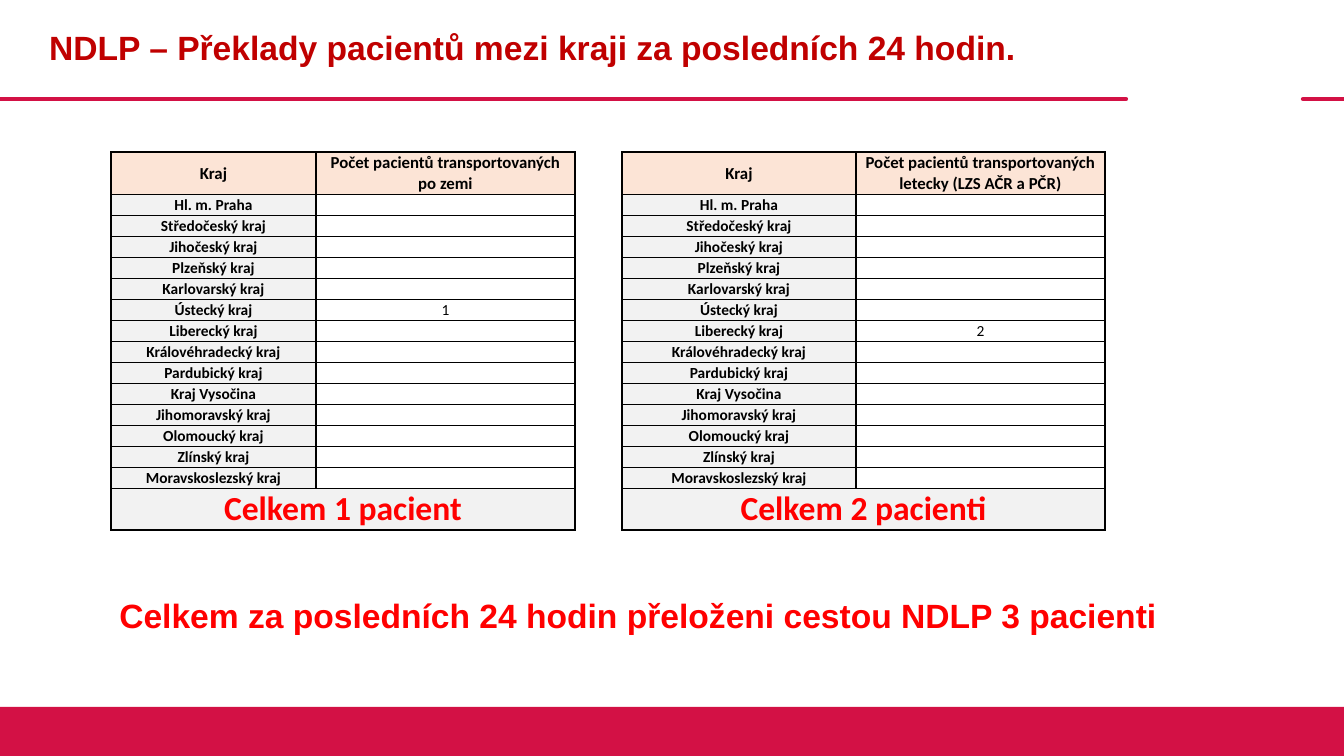
from lxml.etree import SubElement
from pptx import Presentation
from pptx.dml.color import RGBColor
from pptx.enum.shapes import MSO_CONNECTOR, MSO_SHAPE
from pptx.enum.text import MSO_ANCHOR, PP_ALIGN
from pptx.oxml.ns import qn
from pptx.util import Pt

PX = 12192000 / 1344
RED, BLACK, ALERT = "D31145", "000000", "FF0000"
PEACH, GREY, WHITE = "FCE4D6", "F2F2F2", "FFFFFF"

TITLE = "NDLP – Překlady pacientů mezi kraji za posledních 24 hodin."
SUMMARY = "Celkem za posledních 24 hodin přeloženi cestou NDLP 3 pacienti"
REGIONS = [
    "Hl. m. Praha", "Středočeský kraj", "Jihočeský kraj", "Plzeňský kraj",
    "Karlovarský kraj", "Ústecký kraj", "Liberecký kraj", "Královéhradecký kraj",
    "Pardubický kraj", "Kraj Vysočina", "Jihomoravský kraj", "Olomoucký kraj",
    "Zlínský kraj", "Moravskoslezský kraj",
]
TABLES = [
    {"left": 111, "cols": (205, 259),
     "header": "Počet pacientů transportovaných\npo zemi",
     "counts": {"Ústecký kraj": "1"}, "total": "Celkem 1 pacient"},
    {"left": 622, "cols": (234, 249),
     "header": "Počet pacientů transportovaných letecky (LZS AČR a PČR)",
     "counts": {"Liberecký kraj": "2"}, "total": "Celkem 2 pacienti"},
]
TABLE_TOP, ROW_H, TALL_ROW_H = 152, 21, 42
RULES = [(0, 1126), (1303, 1344)]
RULE_Y = 99


def px(n):
    return round(n * PX)


def box(*lengths):
    return [px(n) for n in lengths]


def rgb(color):
    return RGBColor.from_string(color)


def style(font, color, **values):
    for name, value in values.items():
        setattr(font, name, value)
    font.color.rgb = rgb(color)


def write(tf, text, align, color, **values):
    tf.text = text
    for p in tf.paragraphs:
        p.alignment = align
        for r in p.runs:
            style(r.font, color, **values)


def add_border(cell, side, points):
    ln = SubElement(cell._tc.get_or_add_tcPr(), qn(f"a:ln{side}"), w=str(Pt(points)))
    SubElement(SubElement(ln, qn("a:solidFill")), qn("a:srgbClr"), val=BLACK)


def fill_cell(cell, text, fill, size, color=BLACK, bold=True, top=0.5, bottom=0.5):
    for side, points in (("L", 1), ("R", 1), ("T", top), ("B", bottom)):
        add_border(cell, side, points)
    cell.fill.solid()
    cell.fill.fore_color.rgb = rgb(fill)
    cell.vertical_anchor = MSO_ANCHOR.MIDDLE
    cell.margin_left = cell.margin_right = cell.margin_top = px(1)
    cell.margin_bottom = 0
    write(cell.text_frame, text, PP_ALIGN.CENTER, color,
          name="Calibri", size=Pt(size), bold=bold)
    if not text:  # keeps an empty row from growing to the default text size
        SubElement(cell.text_frame.paragraphs[0]._p, qn("a:endParaRPr"), sz=str(size * 100))


def add_region_table(s, spec_left, cols, header, counts, total):
    heights = [TALL_ROW_H] + [ROW_H] * len(REGIONS) + [TALL_ROW_H]
    table = s.shapes.add_table(len(heights), 2, *box(
        spec_left, TABLE_TOP, sum(cols), sum(heights))).table
    table.first_row = table.horz_banding = False
    for col, width in zip(table.columns, cols):
        col.width = px(width)
    for row, height in zip(table.rows, heights):
        row.height = px(height)
    for i, text in enumerate(("Kraj", header)):
        fill_cell(table.cell(0, i), text, PEACH, 12, top=1)
    for i, region in enumerate(REGIONS, 1):
        fill_cell(table.cell(i, 0), region, GREY, 11)
        fill_cell(table.cell(i, 1), counts.get(region, ""), WHITE, 11, bold=False)
    last = len(heights) - 1
    table.cell(last, 0).merge(table.cell(last, 1))
    for i, text in enumerate((total, "")):
        fill_cell(table.cell(last, i), text, GREY, 24, ALERT, bottom=1)


def add_rule(s, start, end):
    rule = s.shapes.add_connector(MSO_CONNECTOR.STRAIGHT, *box(start, RULE_Y, end, RULE_Y))
    rule.line.color.rgb = rgb(RED)
    rule.line.width = Pt(3)
    spPr = rule._element.spPr
    spPr.find(qn("a:ln")).set("cap", "rnd")
    SubElement(spPr, qn("a:effectLst"))


def main():
    prs = Presentation()
    prs.slide_width, prs.slide_height = box(1344, 756)
    s = prs.slides.add_slide(prs.slide_layouts[5])

    title = s.shapes.title
    title.left, title.top, title.width, title.height = box(39, 0, 1090, 99)
    tf = title.text_frame
    write(tf, TITLE, PP_ALIGN.LEFT, "C00000", name="Arial", size=Pt(24), bold=True)
    tf.vertical_anchor = MSO_ANCHOR.MIDDLE
    tf.paragraphs[0].line_spacing = 0.9

    for start, end in RULES:
        add_rule(s, start, end)

    footer = s.shapes.add_shape(MSO_SHAPE.RECTANGLE, *box(0, 707, 1344, 49))
    footer.shadow.inherit = False
    footer.fill.solid()
    footer.fill.fore_color.rgb = rgb(RED)
    footer.line.fill.background()

    for t in TABLES:
        add_region_table(s, t["left"], t["cols"], t["header"], t["counts"], t["total"])

    tf = s.shapes.add_textbox(*box(51, 590, 1174, 50)).text_frame
    tf.word_wrap = True
    write(tf, SUMMARY, PP_ALIGN.CENTER, ALERT, name="Arial", size=Pt(24), bold=True)

    prs.save("out.pptx")


if __name__ == "__main__":
    main()
